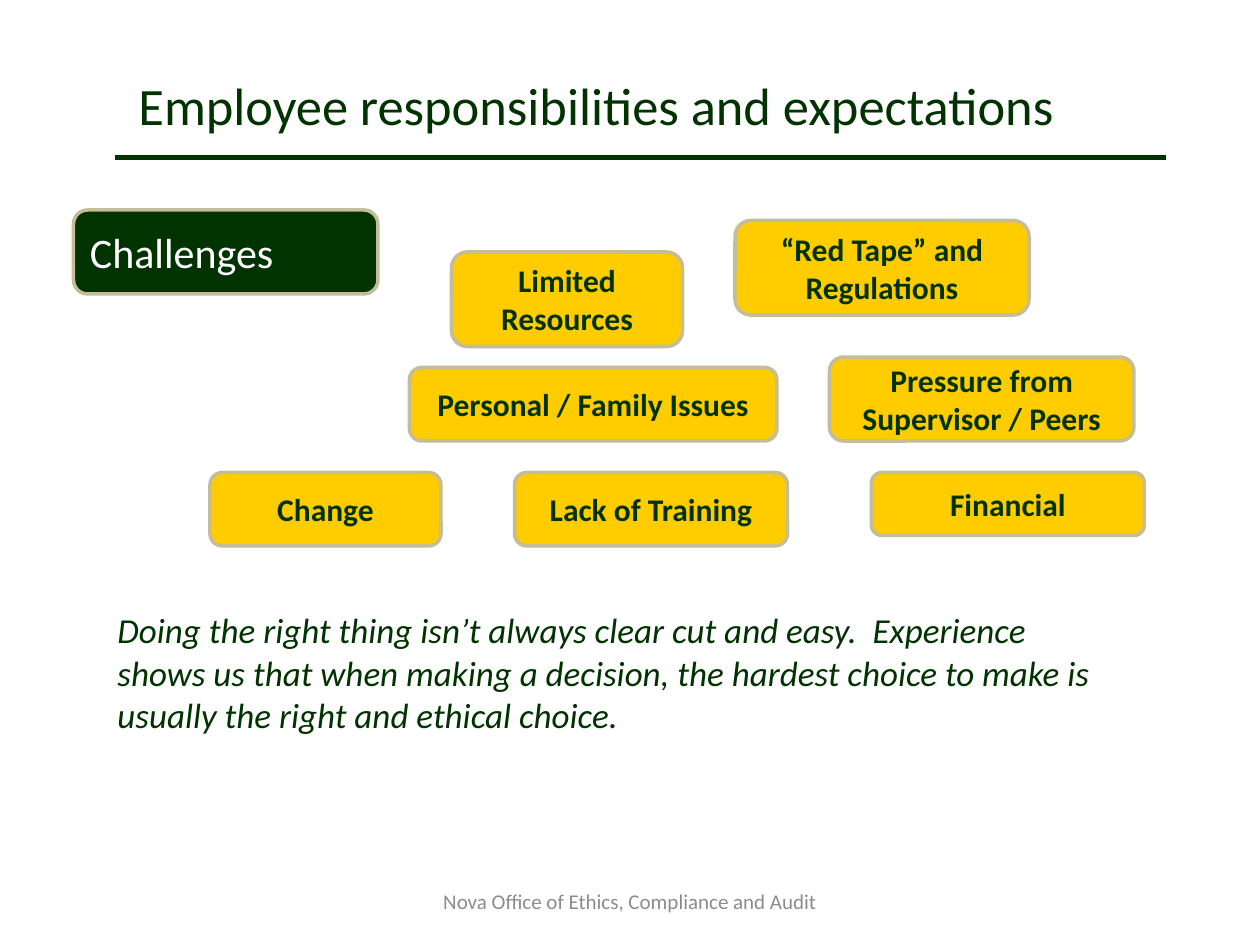
"""Build a slide on employee responsibilities and the challenges to them."""
import pptx
import pptx.dml.color
import pptx.enum.shapes
import pptx.enum.text
import pptx.oxml.ns
import pptx.util

TITLE = ("Employee responsibilities and expectations", (12, 4, 98, 12))
HEADING = ("Challenges", (7, 20, 29, 8))
CHALLENGES = [
    ("Limited Resources", (43, 24, 22, 9)),
    ("“Red Tape” and Regulations", (70, 21, 28, 9)),
    ("Pressure from Supervisor / Peers", (79, 34, 29, 8)),
    ("Personal / Family Issues", (39, 35, 35, 7)),
    ("Financial", (83, 45, 26, 6)),
    ("Lack of Training", (49, 45, 26, 7)),
    ("Change", (20, 45, 22, 7)),
]
MESSAGE = (
    "Doing the right thing isn’t always clear cut and easy.  Experience shows us "
    "that when making a decision, the hardest choice to make is usually the right "
    "and ethical choice.",
    (10, 58, 98, 12),
)
FOOTER = ("Nova Office of Ethics, Compliance and Audit", (41, 83.4, 38, 4.8))
RULE = (11, 15, 111, 15)

COLUMNS, ROWS = 120, 90
LEFT, CENTER = pptx.enum.text.PP_ALIGN.LEFT, pptx.enum.text.PP_ALIGN.CENTER
THEME = {
    "font": "Calibri",
    "green": "003300",
    "border": "C4BD97",
    "border_width": 2,
    "rule_width": 3,
    "title": {"size": 30, "color": "003300", "align": LEFT},
    "heading": {"size": 24, "color": "FFFFFF", "align": LEFT, "fill": "003300"},
    "challenge": {"size": 18, "color": "003300", "align": CENTER, "fill": "FFCC00", "bold": True},
    "message": {"size": 20, "color": "003300", "align": LEFT, "italic": True},
    "footer": {"size": 12, "color": "8C8C8C", "align": CENTER},
}

presentation = pptx.Presentation()
presentation.slide_width = pptx.util.Inches(10)
presentation.slide_height = pptx.util.Inches(7.5)
slide = presentation.slides.add_slide(presentation.slide_layouts[6])


def rgb(value):
    """Return the colour of a hex value."""
    return pptx.dml.color.RGBColor.from_string(value)


def place(cells):
    """Turn pairs of grid columns and rows into slide lengths."""
    units = (presentation.slide_width / COLUMNS, presentation.slide_height / ROWS)
    return [round(cell * units[index % 2]) for index, cell in enumerate(cells)]


def apply(target, values):
    """Set attributes of an object from a dict."""
    for name, value in values.items():
        setattr(target, name, value)


def write(shape, text, style):
    """Put styled text into a shape."""
    apply(shape.text_frame, {
        "word_wrap": True,
        "vertical_anchor": pptx.enum.text.MSO_ANCHOR.MIDDLE,
    })
    paragraph = shape.text_frame.paragraphs[0]
    paragraph.alignment = style["align"]
    run = paragraph.add_run()
    run.text = text
    apply(run.font, {
        "name": THEME["font"],
        "size": pptx.util.Pt(style["size"]),
        "bold": style.get("bold", False),
        "italic": style.get("italic", False),
    })
    run.font.color.rgb = rgb(style["color"])


def add_text(item, style):
    """Add a plain text box."""
    text, cells = item
    write(slide.shapes.add_textbox(*place(cells)), text, style)


def add_box(item, style):
    """Add a filled rounded box with text."""
    text, cells = item
    shape = slide.shapes.add_shape(
        pptx.enum.shapes.MSO_SHAPE.ROUNDED_RECTANGLE, *place(cells))
    shape.shadow.inherit = False
    shape.fill.solid()
    shape.fill.fore_color.rgb = rgb(style["fill"])
    shape.line.color.rgb = rgb(THEME["border"])
    shape.line.width = pptx.util.Pt(THEME["border_width"])
    write(shape, text, style)


def add_rule(cells):
    """Add the line below the title."""
    connector = slide.shapes.add_connector(
        pptx.enum.shapes.MSO_CONNECTOR.STRAIGHT, *place(cells))
    connector.line.color.rgb = rgb(THEME["green"])
    connector.line.width = pptx.util.Pt(THEME["rule_width"])
    properties = connector.element.spPr
    properties.append(properties.makeelement(pptx.oxml.ns.qn("a:effectLst"), {}))


def main():
    """Fill the slide and save it."""
    add_text(TITLE, THEME["title"])
    add_rule(RULE)
    add_box(HEADING, THEME["heading"])
    for challenge in CHALLENGES:
        add_box(challenge, THEME["challenge"])
    add_text(MESSAGE, THEME["message"])
    add_text(FOOTER, THEME["footer"])
    presentation.save("out.pptx")


if __name__ == "__main__":
    main()
